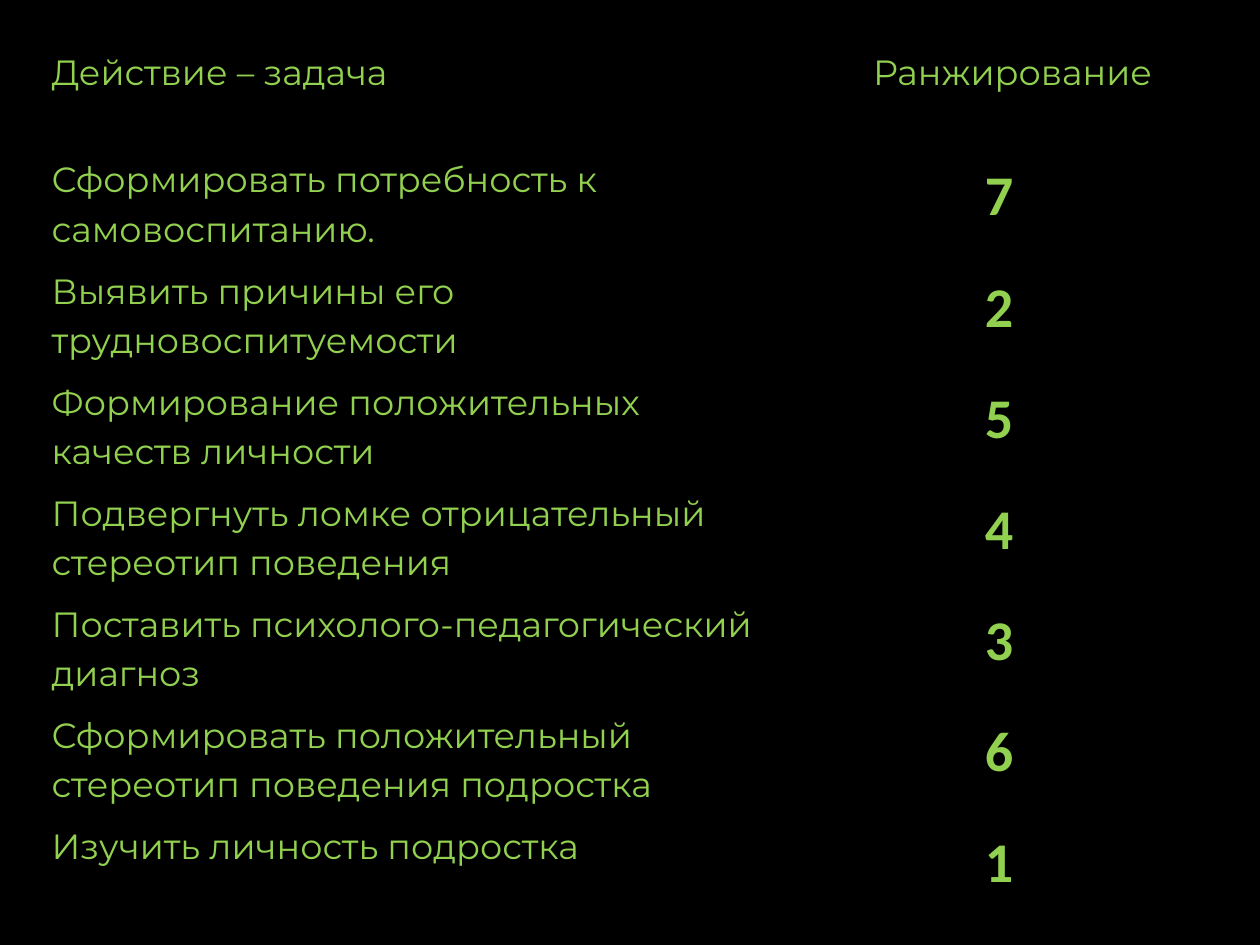
from typing import NamedTuple

from pptx import Presentation
from pptx import util as u
from pptx.dml.color import RGBColor
from pptx.enum import text
from pptx.oxml.ns import qn

BLACK, GREEN = "000000", "92D050"
PLAIN_STYLE = "{2D5ABB26-0587-4C30-8999-92F81FD0307C}"
MARGIN = 0.31
COLUMN_WIDTHS = (6.02, 3.2)
HEADER_HEIGHT, TASK_HEIGHT, LAST_HEIGHT = 0.85, 0.87, 0.5


class Task(NamedTuple):
    action: str
    rank: int


class Style(NamedTuple):
    font: str
    size: int
    bold: bool = False
    align: text.PP_ALIGN = text.PP_ALIGN.LEFT
    left_inset: float = 0.1
    space_after: int = 0


ACTION = Style("Montserrat", 20)
RANK_HEADER = Style("Montserrat", 20, left_inset=0.6, space_after=12)
RANK = Style("Calibri", 32, bold=True, align=text.PP_ALIGN.CENTER)

TASKS = (
    Task("Сформировать потребность к самовоспитанию.", 7),
    Task("Выявить причины его трудновоспитуемости", 2),
    Task("Формирование положительных качеств личности", 5),
    Task("Подвергнуть ломке отрицательный стереотип поведения", 4),
    Task("Поставить психолого-педагогический диагноз", 3),
    Task("Сформировать положительный стереотип поведения подростка", 6),
    Task("Изучить личность подростка", 1),
)


def colour(value: str) -> RGBColor:
    return RGBColor.from_string(value)


def write_cell(cell, words: str, style: Style) -> None:
    cell.fill.background()
    cell.margin_left = u.Inches(style.left_inset)
    cell.text = words
    paragraph = cell.text_frame.paragraphs[0]
    paragraph.alignment = style.align
    paragraph.line_spacing = 1.15
    paragraph.space_after = u.Pt(style.space_after)
    font = paragraph.font
    font.name, font.size, font.bold = style.font, u.Pt(style.size), style.bold
    font.color.rgb = colour(GREEN)


def add_ranking(slide) -> None:
    heights = (HEADER_HEIGHT, *[TASK_HEIGHT] * (len(TASKS) - 1), LAST_HEIGHT)
    ranking = slide.shapes.add_table(
        len(heights), len(COLUMN_WIDTHS), u.Inches(MARGIN), u.Inches(MARGIN),
        u.Inches(sum(COLUMN_WIDTHS)), u.Inches(sum(heights)),
    ).table
    ranking.first_row = ranking.horz_banding = False
    ranking._tbl.tblPr.find(qn("a:tableStyleId")).text = PLAIN_STYLE
    for column, width in zip(ranking.columns, COLUMN_WIDTHS):
        column.width = u.Inches(width)
    for row, height in zip(ranking.rows, heights):
        row.height = u.Inches(height)

    write_cell(ranking.cell(0, 0), "Действие – задача", ACTION)
    write_cell(ranking.cell(0, 1), "Ранжирование", RANK_HEADER)
    for row, task in enumerate(TASKS, start=1):
        write_cell(ranking.cell(row, 0), task.action, ACTION)
        write_cell(ranking.cell(row, 1), str(task.rank), RANK)


def main() -> None:
    deck = Presentation()
    deck.slide_width, deck.slide_height = u.Inches(10), u.Inches(7.5)
    slide = deck.slides.add_slide(deck.slide_layouts[6])
    slide.background.fill.solid()
    slide.background.fill.fore_color.rgb = colour(BLACK)
    add_ranking(slide)
    deck.save("out.pptx")


if __name__ == "__main__":
    main()
